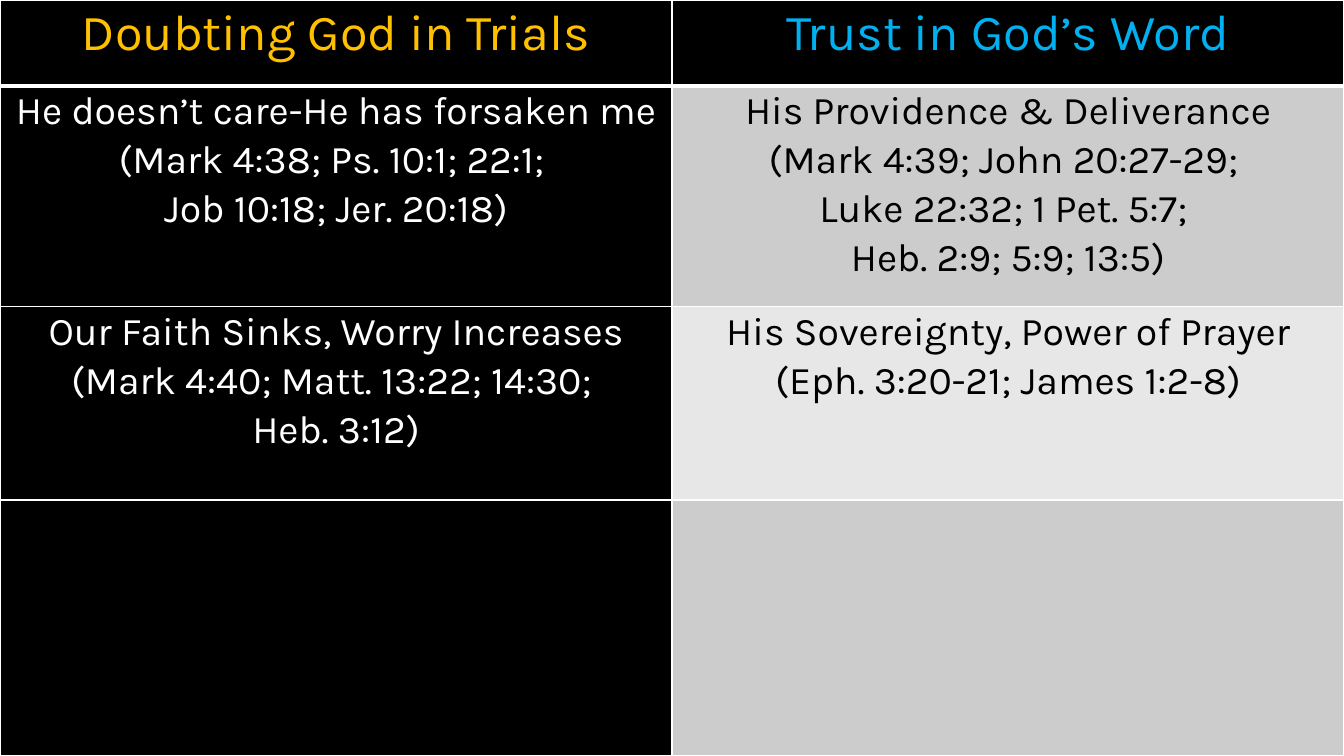
from lxml import etree
from pptx import Presentation
from pptx.dml.color import RGBColor
from pptx.enum.text import PP_ALIGN
from pptx.oxml.ns import qn
from pptx.util import Inches, Pt

CENTER = PP_ALIGN.CENTER
BLACK = RGBColor(0, 0, 0)
WHITE = RGBColor(0xFF, 0xFF, 0xFF)
GOLD = RGBColor(0xFF, 0xC0, 0x00)
BLUE = RGBColor(0x00, 0xB0, 0xF0)
GRAY = RGBColor(0xCC, 0xCC, 0xCC)
LIGHT_GRAY = RGBColor(0xE7, 0xE7, 0xE7)

SLIDE_WIDTH, SLIDE_HEIGHT = 13.33, 7.5
ROW_HEIGHTS = [0.85, 2.19, 1.92, 2.54]
HEADER_COLORS = [GOLD, BLUE]
BODY_COLORS = [WHITE, BLACK]
FILLS = [(BLACK, BLACK), (BLACK, GRAY), (BLACK, LIGHT_GRAY), (BLACK, GRAY)]
CONTENT = [
    (["Doubting God in Trials"], ["Trust in God’s Word"]),
    (
        ["He doesn’t care-He has forsaken me (Mark 4:38; Ps. 10:1; 22:1; ",
         "Job 10:18; Jer. 20:18)"],
        ["His Providence & Deliverance",
         "(Mark 4:39; John 20:27-29; ",
         "Luke 22:32; 1 Pet. 5:7; ",
         "Heb. 2:9; 5:9; 13:5)"],
    ),
    (
        ["Our Faith Sinks, Worry Increases (Mark 4:40; Matt. 13:22; 14:30; ",
         "Heb. 3:12)"],
        ["His Sovereignty, Power of Prayer (Eph. 3:20-21; James 1:2-8)"],
    ),
    ([], []),
]


def set_borders(cell, top, bottom):
    """Draw white cell borders, with top and bottom widths in points."""
    properties = cell._tc.get_or_add_tcPr()
    widths = {"a:lnL": 1, "a:lnR": 1, "a:lnT": top, "a:lnB": bottom}
    for index, (tag, width) in enumerate(widths.items()):
        line = etree.Element(qn(tag), w=str(Pt(width)))
        fill = etree.SubElement(line, qn("a:solidFill"))
        etree.SubElement(fill, qn("a:srgbClr"), val=str(WHITE))
        properties.insert(index, line)


def write_cell(cell, lines, size, color):
    """Write centred paragraphs into a table cell."""
    cell.margin_left = cell.margin_right = Inches(0.07)
    cell.margin_top = cell.margin_bottom = 0
    for index, line in enumerate(lines):
        frame = cell.text_frame
        paragraph = frame.add_paragraph() if index else frame.paragraphs[0]
        paragraph.text = line
        paragraph.alignment = CENTER
        paragraph.line_spacing = 1.07
        paragraph.font.name = "Karla"
        paragraph.font.size = Pt(size)
        paragraph.font.color.rgb = color


def add_comparison_table(slide, left, top, width, height):
    """Add the two-column table of doubts and answers in the given box."""
    table = slide.shapes.add_table(
        len(CONTENT), 2, Inches(left), Inches(top), Inches(width), Inches(height)
    ).table
    table.first_row = False
    table.horz_banding = False
    for column in table.columns:
        column.width = Inches(width / 2)
    for row_index, row_height in enumerate(ROW_HEIGHTS):
        table.rows[row_index].height = Inches(row_height * height / sum(ROW_HEIGHTS))
        is_header = row_index == 0
        size = 36 if is_header else 28
        colors = HEADER_COLORS if is_header else BODY_COLORS
        for column_index, lines in enumerate(CONTENT[row_index]):
            cell = table.cell(row_index, column_index)
            cell.fill.solid()
            cell.fill.fore_color.rgb = FILLS[row_index][column_index]
            set_borders(cell, 3 if row_index == 1 else 1, 3 if is_header else 1)
            write_cell(cell, lines, size, colors[column_index])


def main():
    """Build and save the presentation."""
    presentation = Presentation()
    presentation.slide_width = Inches(SLIDE_WIDTH)
    presentation.slide_height = Inches(SLIDE_HEIGHT)
    slide = presentation.slides.add_slide(presentation.slide_layouts[6])
    slide.background.fill.solid()
    slide.background.fill.fore_color.rgb = BLACK
    add_comparison_table(slide, 0, 0, SLIDE_WIDTH, SLIDE_HEIGHT)
    presentation.save("out.pptx")


if __name__ == "__main__":
    main()
